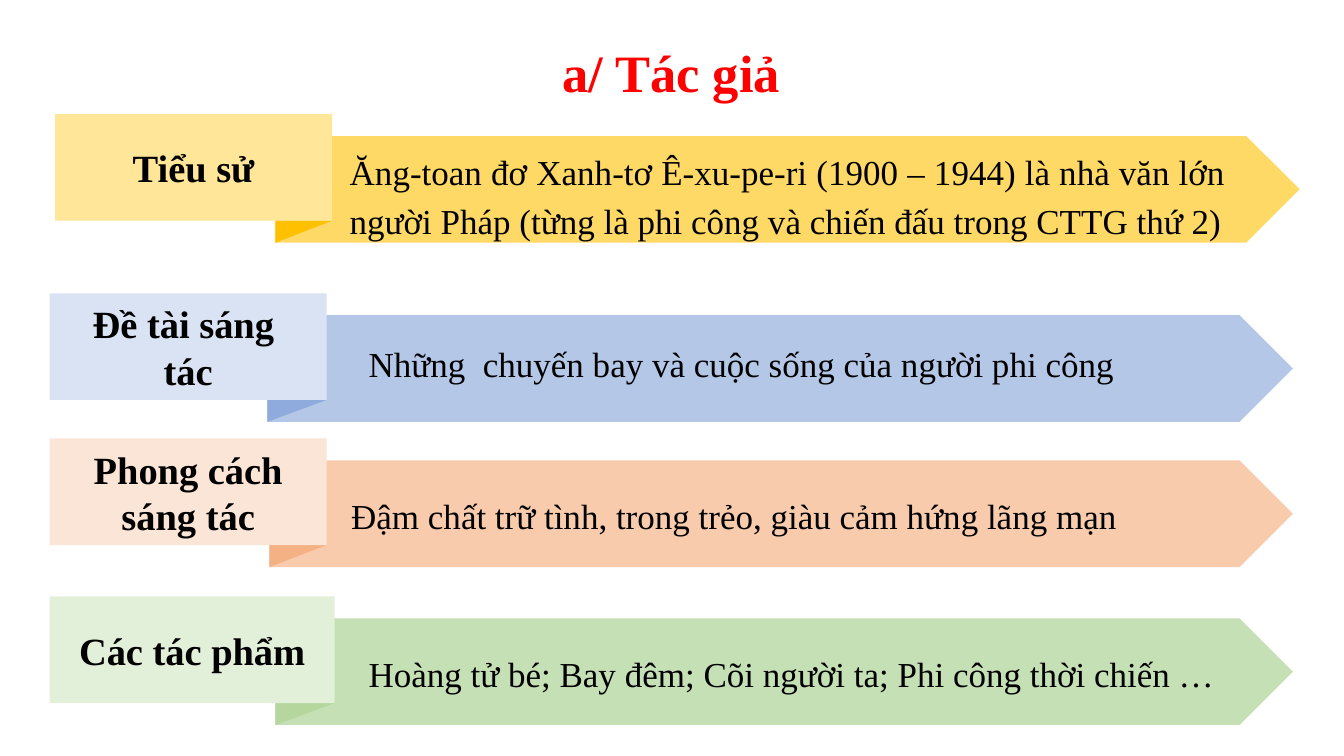
from pptx import Presentation
from pptx.dml.color import RGBColor
from pptx.enum.shapes import MSO_SHAPE as Kind
from pptx.enum.text import MSO_ANCHOR as Anchor, MSO_AUTO_SIZE as Fit, PP_ALIGN as Align
from pptx.util import Inches, Pt

TAG_H = 14.1   # height of tags and arrows
DROP = 2.9     # how far an arrow hangs below its tag

# label, (tag left, top, width), (arrow left, right), (tag, arrow, fold colours),
# detail, (detail left, top, width, height), line spacing
ROWS = [
    ("Tiểu sử", (4.1, 15.1, 20.6), (20.5, 96.7), ("FFE699", "FFD966", "FFC000"),
     "Ăng-toan đơ Xanh-tơ Ê-xu-pe-ri (1900 – 1944) là nhà văn lớn người Pháp "
     "(từng là phi công và chiến đấu trong CTTG thứ 2)", (25.1, 18.3, 67, 14), 1.15),
    ("Đề tài sáng  tác", (3.7, 38.8, 20.6), (19.9, 96.2), ("DAE3F3", "B4C7E7", "8FAADC"),
     "Những  chuyến bay và cuộc sống của người phi công", (26.5, 44.5, 60.1, 7.3), 1.0),
    ("Phong cách sáng tác", (3.7, 58, 20.6), (20.05, 96.2), ("FBE5D6", "F8CBAD", "F4B183"),
     "Đậm chất trữ tình, trong trẻo, giàu cảm hứng lãng mạn", (25.2, 63.7, 68.3, 7.6), 1.15),
    ("Các tác phẩm", (3.7, 78.9, 21.2), (20.5, 96.2), ("E2F0D9", "C5E0B4", "B5D79E"),
     "Hoàng tử bé; Bay đêm; Cõi người ta; Phi công thời chiến …", (26.5, 84.7, 70.1, 7.6), 1.15),
]


def tint(code):
    return RGBColor.from_string(code)


def write(frame, text, size=20, bold=False, color="000000", align=Align.JUSTIFY,
          anchor=Anchor.TOP, lead=1.0, inset=None, fit=Fit.NONE):
    frame.word_wrap = True
    frame.auto_size = fit
    frame.vertical_anchor = anchor
    if inset is not None:
        frame.margin_left = frame.margin_right = Inches(inset)
        frame.margin_top = frame.margin_bottom = Inches(inset)
    para = frame.paragraphs[0]
    para.alignment = align
    para.line_spacing = lead
    run = para.add_run()
    run.text = text
    font = run.font
    font.name, font.size, font.bold = "Times New Roman", Pt(size), bold
    font.color.rgb = tint(color)


class Page:
    """Holds the slide and places things by percent of its size."""

    def __init__(self, deck):
        self.wide, self.high = deck.slide_width, deck.slide_height
        self.slide = deck.slides.add_slide(deck.slide_layouts[5])
        self.shapes = self.slide.shapes

    def box(self, x, y, w, h):
        return (round(x * self.wide / 100), round(y * self.high / 100),
                round(w * self.wide / 100), round(h * self.high / 100))

    def title(self, text, *area):
        head = self.shapes.title
        head.left, head.top, head.width, head.height = self.box(*area)
        write(head.text_frame, text, size=30, bold=True, color="FF0000", align=Align.CENTER)

    def block(self, kind, color, *area):
        shape = self.shapes.add_shape(kind, *self.box(*area))
        shape.shadow.inherit = False
        shape.fill.solid()
        shape.fill.fore_color.rgb = tint(color)
        shape.line.fill.background()
        return shape

    def fold(self, color, *area):
        """Triangle with its right angle at the top left."""
        shape = self.block(Kind.RIGHT_TRIANGLE, color, *area)
        shape.rotation = 180
        shape.element.spPr.xfrm.set("flipH", "1")

    def tag(self, text, color, *area):
        shape = self.block(Kind.RECTANGLE, color, *area)
        write(shape.text_frame, text, size=22, bold=True, align=Align.CENTER,
              anchor=Anchor.MIDDLE, inset=0.14)

    def note(self, text, lead, *area):
        shape = self.shapes.add_textbox(*self.box(*area))
        write(shape.text_frame, text, lead=lead, fit=Fit.SHAPE_TO_FIT_TEXT)

    def row(self, label, spot, span, colors, text, area, lead):
        left, top, width = spot
        start, end = span
        pale, main, dark = colors
        self.block(Kind.PENTAGON, main, start, top + DROP, end - start, TAG_H)
        self.fold(dark, start, top + TAG_H, left + width - start, DROP)
        self.tag(label, pale, left, top, width, TAG_H)
        self.note(text, lead, *area)


def main():
    deck = Presentation()
    deck.slide_width, deck.slide_height = Inches(10.67), Inches(6)
    page = Page(deck)
    page.title("a/ Tác giả", 28.3, 4.5, 43.3, 10)
    for row in ROWS:
        page.row(*row)
    deck.save("out.pptx")


if __name__ == "__main__":
    main()
